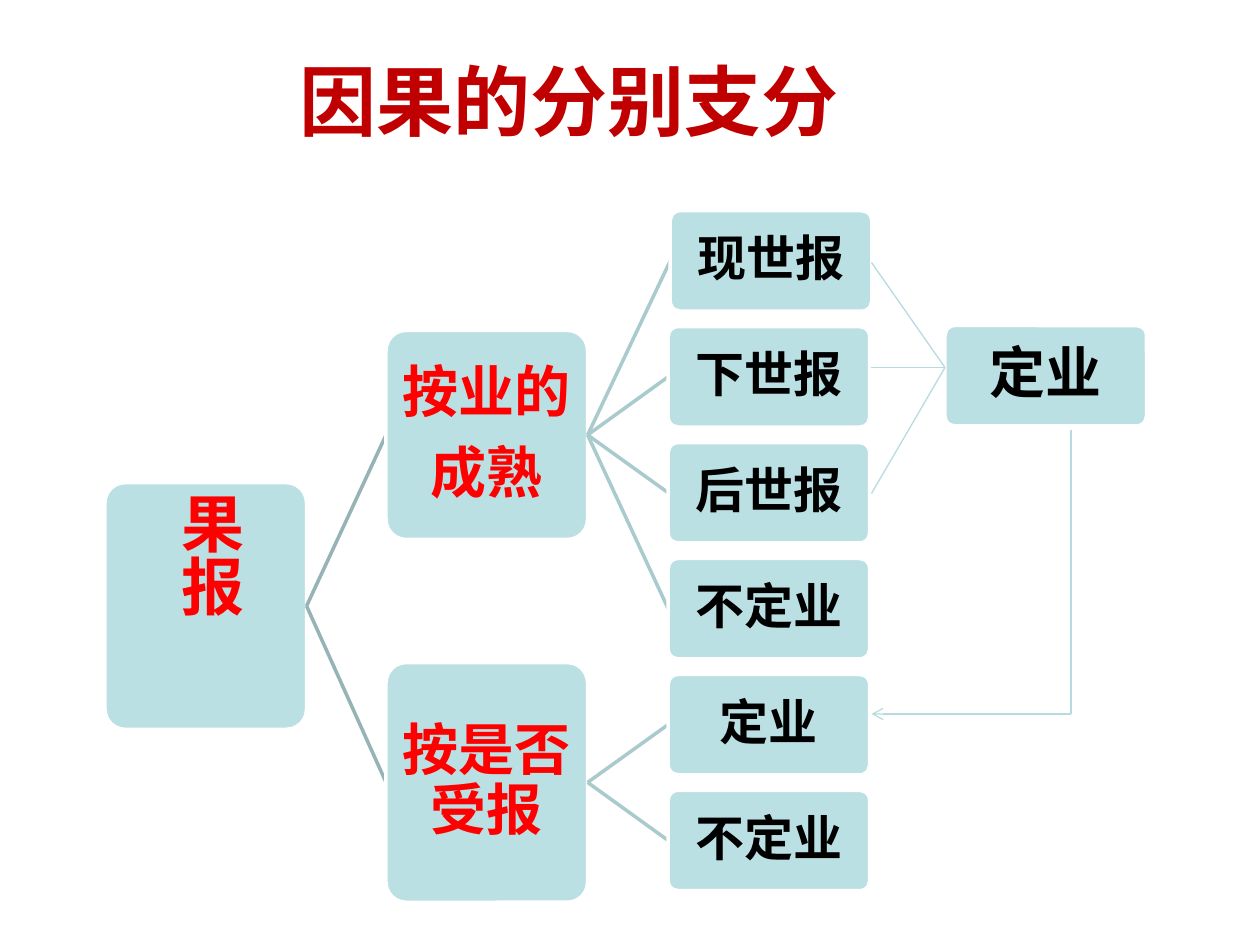
from dataclasses import dataclass

import pptx
import pptx.dml.color
import pptx.enum.shapes
import pptx.enum.text
import pptx.oxml.ns
import pptx.util
from lxml import etree

Pt = pptx.util.Pt
COLORS = {
    "title": "C00000", "category": "FF0000", "outcome": "000000",
    "box": "BBE0E3", "border": "FFFFFF",
    "root_link": "96B3B6", "branch_link": "AACBCE", "cross_link": "B6DCDF",
}
FONT = "Arial"
BOX_WIDTH = 115.2
LEAF_HEIGHT = 57.4
LEAF_LEFT = 381.8
LEAF_TOP = 120.4
LEAF_PITCH = 66.24


@dataclass(frozen=True)
class Node:
    text: str
    left: float
    top: float
    height: float
    size: float
    color: str
    inset: float = 1.6
    vertical: bool = False

    @property
    def middle(self) -> float:
        return self.top + self.height / 2

    @property
    def right(self) -> float:
        return self.left + BOX_WIDTH


def rgb(name: str) -> pptx.dml.color.RGBColor:
    return pptx.dml.color.RGBColor.from_string(COLORS[name])


def format_text(frame, size: float, color: str) -> None:
    frame.word_wrap = True
    frame.vertical_anchor = pptx.enum.text.MSO_ANCHOR.MIDDLE
    for paragraph in frame.paragraphs:
        paragraph.alignment = pptx.enum.text.PP_ALIGN.CENTER
        for run in paragraph.runs:
            run.font.size = Pt(size)
            run.font.bold = True
            run.font.name = FONT
            run.font.color.rgb = rgb(color)
            # Chinese glyphs take the East Asian typeface
            etree.SubElement(run.font._element, pptx.oxml.ns.qn("a:ea"), typeface=FONT)


def draw_title(slide, text: str) -> None:
    title = slide.shapes.add_textbox(Pt(1.4), Pt(12.2), Pt(648), Pt(90))
    title.text_frame.text = text
    format_text(title.text_frame, 44, "title")


def draw_node(slide, node: Node) -> None:
    box = slide.shapes.add_shape(
        pptx.enum.shapes.MSO_SHAPE.ROUNDED_RECTANGLE,
        Pt(node.left), Pt(node.top), Pt(BOX_WIDTH), Pt(node.height))
    box.adjustments[0] = 0.1
    box.shadow.inherit = False
    box.fill.solid()
    box.fill.fore_color.rgb = rgb("box")
    box.line.color.rgb = rgb("border")
    box.line.width = Pt(2)

    frame = box.text_frame
    frame.margin_left = frame.margin_right = Pt(node.inset)
    frame.margin_top = frame.margin_bottom = Pt(node.inset)
    frame.text = node.text
    format_text(frame, node.size, node.color)
    for paragraph in frame.paragraphs:
        paragraph.line_spacing = 0.9
        paragraph.space_after = Pt(round(node.size * 0.35, 1))
    if node.vertical:
        frame._txBody.bodyPr.set("vert", "eaVert")
        # The column of characters starts at the top of the box
        frame.paragraphs[0].alignment = pptx.enum.text.PP_ALIGN.LEFT


def draw_link(slide, start: tuple[float, float], end: tuple[float, float],
              color: str, width: float, arrow: bool = False) -> None:
    link = slide.shapes.add_connector(
        pptx.enum.shapes.MSO_CONNECTOR.STRAIGHT, *map(Pt, start + end))
    link.line.color.rgb = rgb(color)
    link.line.width = Pt(width)
    if arrow:
        etree.SubElement(link.line._get_or_add_ln(),
                         pptx.oxml.ns.qn("a:tailEnd"), type="arrow")
    etree.SubElement(link._element.spPr, pptx.oxml.ns.qn("a:effectLst"))


def draw_child(slide, parent: Node, child: Node, color: str) -> None:
    draw_link(slide, (parent.right, parent.middle), (child.left, child.middle), color, 2)
    draw_node(slide, child)


def leaf(row: int, text: str) -> Node:
    left = LEAF_LEFT + (1.2 if row == 0 else 0)
    return Node(text, left, LEAF_TOP + row * LEAF_PITCH, LEAF_HEIGHT, 28, "outcome")


def main() -> None:
    presentation = pptx.Presentation()
    presentation.slide_width, presentation.slide_height = Pt(720), Pt(540)
    slide = presentation.slides.add_slide(presentation.slide_layouts[6])
    draw_title(slide, "因果的分别支分")

    retribution = Node("果报", 60, 275.8, 141, 36, "category", 2, vertical=True)
    ripening = Node("按业的\n成熟", 220.6, 188.8, 119.5, 32, "category")
    certainty = Node("按是否受报", 220.6, 378.6, 137, 32, "category")
    names = ["现世报", "下世报", "后世报", "不定业", "定业", "不定业"]
    leaves = [leaf(row, name) for row, name in enumerate(names)]

    draw_node(slide, retribution)
    for branch, outcomes in ((ripening, leaves[:4]), (certainty, leaves[4:])):
        draw_child(slide, retribution, branch, "root_link")
        for outcome in outcomes:
            draw_child(slide, branch, outcome, "branch_link")

    fixed_karma = Node("定业", 540, 186, LEAF_HEIGHT, 32, "outcome")
    draw_node(slide, fixed_karma)
    junction = (540, 210)
    link_left, turn_x, turn_y = 498, 612, 408
    for source_y in (150, 210, 282):
        draw_link(slide, junction, (link_left, source_y), "cross_link", 0.75)
    draw_link(slide, (turn_x, 246), (turn_x, turn_y), "cross_link", 0.75)
    draw_link(slide, (turn_x, turn_y), (link_left, turn_y), "cross_link", 0.75, arrow=True)

    presentation.save("out.pptx")


if __name__ == "__main__":
    main()
